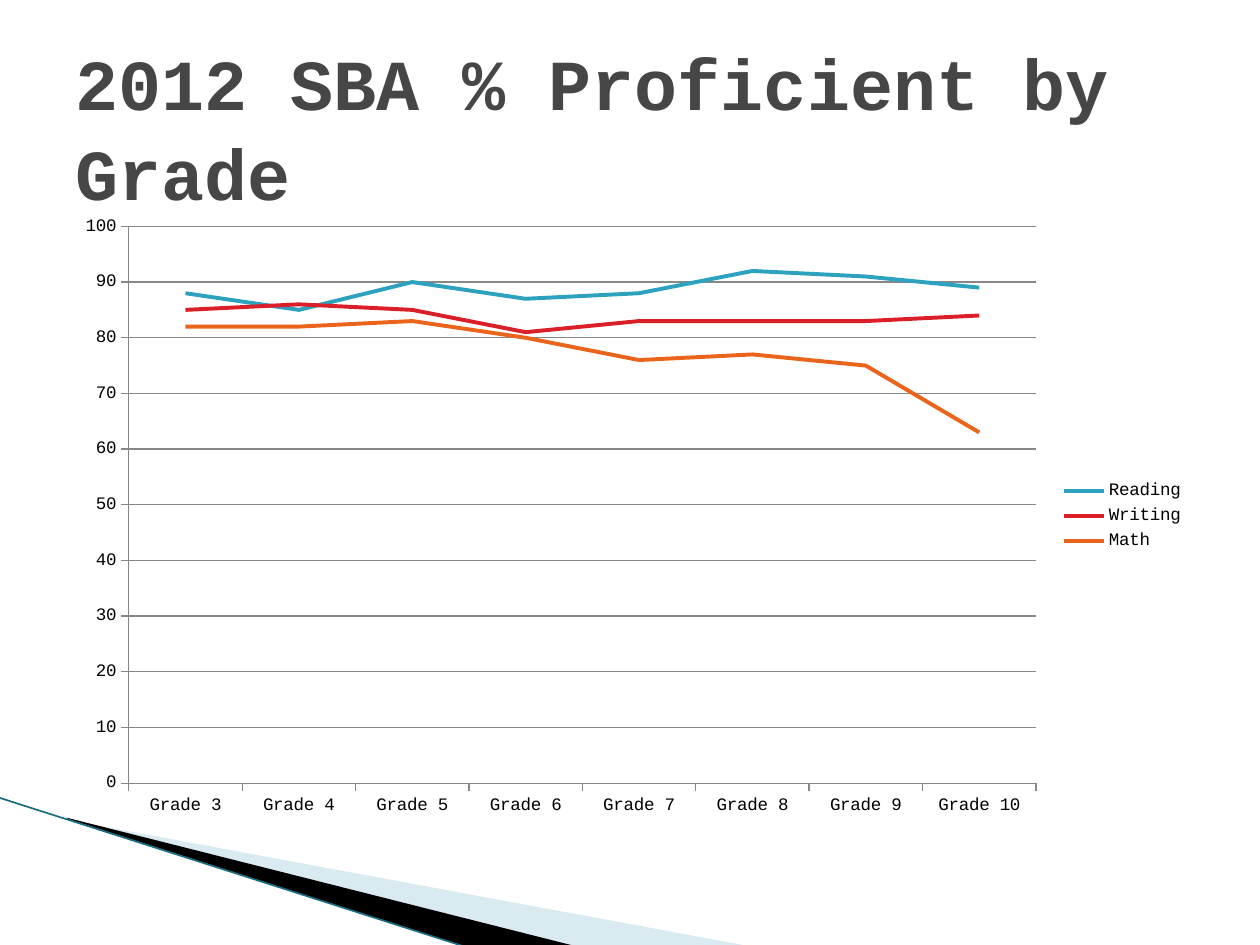
from pptx import Presentation
from pptx.chart.data import CategoryChartData
from pptx.dml.color import RGBColor
from pptx.enum.chart import XL_CHART_TYPE as ChartType, XL_LEGEND_POSITION as LegendPosition
from pptx.enum.chart import XL_MARKER_STYLE as MarkerStyle, XL_TICK_MARK as TickMark
from pptx.enum.shapes import MSO_CONNECTOR as Connector
from pptx.enum.text import MSO_ANCHOR as Anchor
from pptx.oxml.ns import qn
from pptx.util import Inches, Pt
from lxml import etree

PALE_BLUE = RGBColor(0xA0, 0xCB, 0xDC)
TEAL = RGBColor(0x17, 0x6C, 0x80)
BLACK = RGBColor(0, 0, 0)
TITLE_GRAY = RGBColor(0x46, 0x46, 0x46)
GRID_GRAY = RGBColor(0x87, 0x87, 0x87)
READING_BLUE = RGBColor(0x2D, 0xA2, 0xBF)
WRITING_RED = RGBColor(0xDA, 0x1F, 0x28)
MATH_ORANGE = RGBColor(0xEB, 0x64, 0x1B)
FONT = "Courier New"

deck = Presentation()
deck.slide_width, deck.slide_height = Inches(10), Inches(7.5)
page = deck.slides.add_slide(deck.slide_layouts[6])

# Corner wedges: outline, fill colour, opacity in percent
wedges = [
    ([(0.55, 6.51), (5.95, 7.51), (4.56, 7.51), (0.55, 6.5)], PALE_BLUE, 40),
    ([(0.53, 6.49), (4.57, 7.51), (3.72, 7.52), (0.54, 6.5)], BLACK, 100),
]
for points, color, opacity in wedges:
    corners = [(Inches(x), Inches(y)) for x, y in points]
    builder = page.shapes.build_freeform(*corners[0], scale=1.0)
    builder.add_line_segments(corners[1:], close=True)
    wedge = builder.convert_to_shape()
    wedge.shadow.inherit = False
    wedge.line.fill.background()
    wedge.fill.solid()
    wedge.fill.fore_color.rgb = color
    if opacity < 100:
        fill_color = wedge.fill._xPr.find(qn("a:solidFill"))[0]
        etree.SubElement(fill_color, qn("a:alpha"), val=str(opacity * 1000))

# Thin edge line along the wedges
edge = page.shapes.add_connector(
    Connector.STRAIGHT, Inches(-0.01), Inches(6.33), Inches(3.71), Inches(7.52))
edge.line.color.rgb = TEAL
edge.line.width = Pt(0.95)
etree.SubElement(edge._element.spPr, qn("a:effectLst"))

# Line chart of scores by grade
scores = [
    ("Reading", [88, 85, 90, 87, 88, 92, 91, 89], READING_BLUE),
    ("Writing", [85, 86, 85, 81, 83, 83, 83, 84], WRITING_RED),
    ("Math", [82, 82, 83, 80, 76, 77, 75, 63], MATH_ORANGE),
]
data = CategoryChartData()
data.categories = [f"Grade {grade}" for grade in range(3, 11)]
for subject, values, _ in scores:
    data.add_series(subject, values)
chart = page.shapes.add_chart(
    ChartType.LINE, Inches(0.5), Inches(1.62), Inches(9), Inches(4.95), data).chart
chart.has_title = False
chart.font.name, chart.font.size = FONT, Pt(10)
chart.font.color.rgb = BLACK
chart.has_legend = True
chart.legend.position = LegendPosition.RIGHT
chart.legend.include_in_layout = False
chart.plots[0].vary_by_categories = False

for series, (_, _, color) in zip(chart.plots[0].series, scores):
    series.smooth = False
    series.marker.style = MarkerStyle.NONE
    series.format.line.color.rgb = color
    series.format.line.width = Pt(2.25)

# Axes and gridlines
value_axis = chart.value_axis
value_axis.minimum_scale, value_axis.maximum_scale = 0, 100
value_axis.major_unit = 10
value_axis.has_major_gridlines = True
for axis in (chart.category_axis, value_axis):
    axis.major_tick_mark = TickMark.OUTSIDE
    axis.minor_tick_mark = TickMark.NONE
for ruled in (chart.category_axis, value_axis, value_axis.major_gridlines):
    ruled.format.line.color.rgb = GRID_GRAY
    ruled.format.line.width = Pt(0.75)

# Title
box = page.shapes.add_textbox(Inches(0.5), Inches(0.3), Inches(9), Inches(1.25))
frame = box.text_frame
frame.word_wrap = True
frame.vertical_anchor = Anchor.MIDDLE
frame.margin_top = Inches(0.18)
para = frame.paragraphs[0]
para.line_spacing = 1.05
span = para.add_run()
span.text = "2012 SBA % Proficient by Grade"
for name, value in {"name": FONT, "size": Pt(41), "bold": True}.items():
    setattr(span.font, name, value)
span.font.color.rgb = TITLE_GRAY

deck.save("out.pptx")
